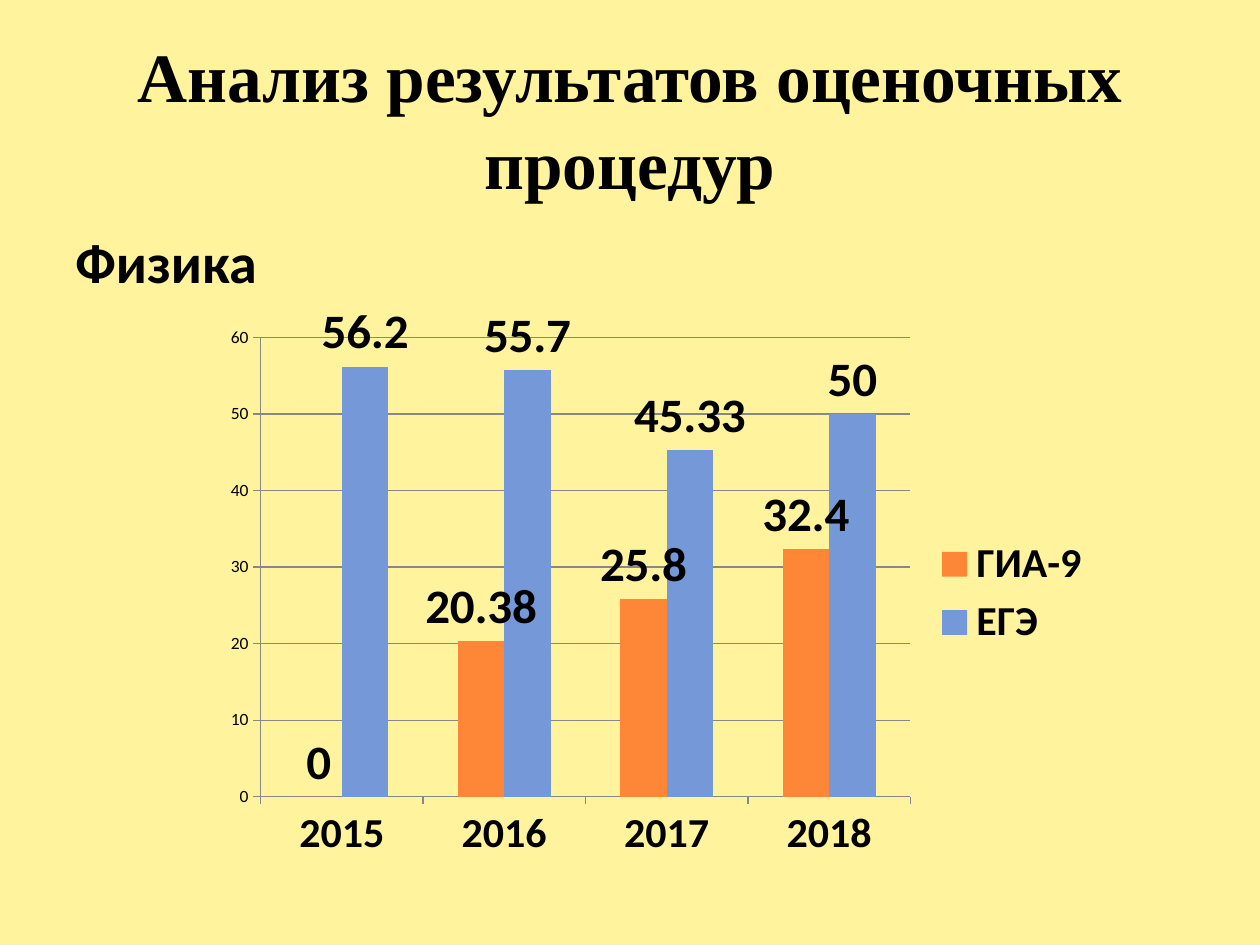
from dataclasses import dataclass

from pptx import Presentation
from pptx.chart.data import CategoryChartData
from pptx.dml.color import RGBColor
from pptx.enum.chart import XL_CHART_TYPE, XL_LABEL_POSITION, XL_LEGEND_POSITION, XL_TICK_MARK
from pptx.enum.text import MSO_ANCHOR, MSO_AUTO_SIZE, PP_ALIGN
from pptx.util import Emu, Pt

PX = 914400 // 126


@dataclass(frozen=True)
class Theme:
    background: str = "FFF39D"
    text: str = "000000"
    axis: str = "878787"
    series: tuple = ("FE8637", "7598D9")
    title_font: str = "Times New Roman"
    body_font: str = "Calibri"
    title_size: float = 39.6
    subject_size: int = 32
    label_size: int = 28
    category_size: int = 24
    scale_size: int = 10


def px(*lengths):
    return [Emu(length * PX) for length in lengths]


class SlideBuilder:
    def __init__(self, deck, theme):
        self.theme = theme
        self.slide = deck.slides.add_slide(deck.slide_layouts[5])
        fill = self.slide.background.fill
        fill.solid()
        fill.fore_color.rgb = RGBColor.from_string(theme.background)

    def style(self, font, size, bold=True, name=None):
        font.name = name or self.theme.body_font
        font.size = Pt(size)
        font.bold = bold
        font.color.rgb = RGBColor.from_string(self.theme.text)

    def title(self, text, left, top, width, height):
        box = self.slide.shapes.title
        box.left, box.top, box.width, box.height = px(left, top, width, height)
        frame = box.text_frame
        frame.text = text
        frame.auto_size = MSO_AUTO_SIZE.NONE
        frame.vertical_anchor = MSO_ANCHOR.MIDDLE
        para = frame.paragraphs[0]
        para.alignment = PP_ALIGN.CENTER
        para.line_spacing = 1.05
        self.style(para.runs[0].font, self.theme.title_size, name=self.theme.title_font)

    def text(self, text, left, top, width, height):
        frame = self.slide.shapes.add_textbox(*px(left, top, width, height)).text_frame
        frame.word_wrap = True
        frame.text = text
        self.style(frame.paragraphs[0].runs[0].font, self.theme.subject_size)

    def axis(self, axis, size, bold):
        axis.major_tick_mark = XL_TICK_MARK.OUTSIDE
        axis.minor_tick_mark = XL_TICK_MARK.NONE
        axis.format.line.color.rgb = RGBColor.from_string(self.theme.axis)
        self.style(axis.tick_labels.font, size, bold)

    def column_chart(self, categories, series, left, top, width, height):
        data = CategoryChartData()
        data.categories = categories
        for name, values in series.items():
            data.add_series(name, values)
        chart = self.slide.shapes.add_chart(
            XL_CHART_TYPE.COLUMN_CLUSTERED, *px(left, top, width, height), data).chart
        chart.has_title = False
        self.style(chart.font, self.theme.scale_size, False)

        # Axes
        self.axis(chart.category_axis, self.theme.category_size, True)
        scale = chart.value_axis
        self.axis(scale, self.theme.scale_size, False)
        scale.minimum_scale, scale.maximum_scale, scale.major_unit = 0, 60, 10
        scale.has_major_gridlines = True
        scale.major_gridlines.format.line.color.rgb = RGBColor.from_string(self.theme.axis)

        # Legend
        chart.has_legend = True
        chart.legend.position = XL_LEGEND_POSITION.RIGHT
        chart.legend.include_in_layout = False
        self.style(chart.legend.font, self.theme.category_size)

        # Columns and their values
        plot = chart.plots[0]
        plot.gap_width, plot.overlap = 150, 0
        plot.vary_by_categories = False
        for column, color in zip(plot.series, self.theme.series):
            column.format.fill.solid()
            column.format.fill.fore_color.rgb = RGBColor.from_string(color)
            labels = column.data_labels
            labels.show_value = True
            labels.position = XL_LABEL_POSITION.OUTSIDE_END
            self.style(labels.font, self.theme.label_size)


def main():
    deck = Presentation()
    deck.slide_width, deck.slide_height = px(1260, 945)
    page = SlideBuilder(deck, Theme())

    # Headings
    page.title("Анализ результатов оценочных процедур", 63, 38, 1134, 157)
    page.text("Физика", 63, 221, 1134, 624)

    # Exam results by year
    page.column_chart(
        ["2015", "2016", "2017", "2018"],
        {"ГИА-9": (0, 20.38, 25.8, 32.4), "ЕГЭ": (56.2, 55.7, 45.33, 50)},
        213, 304, 893, 566)

    deck.save("out.pptx")


if __name__ == "__main__":
    main()
